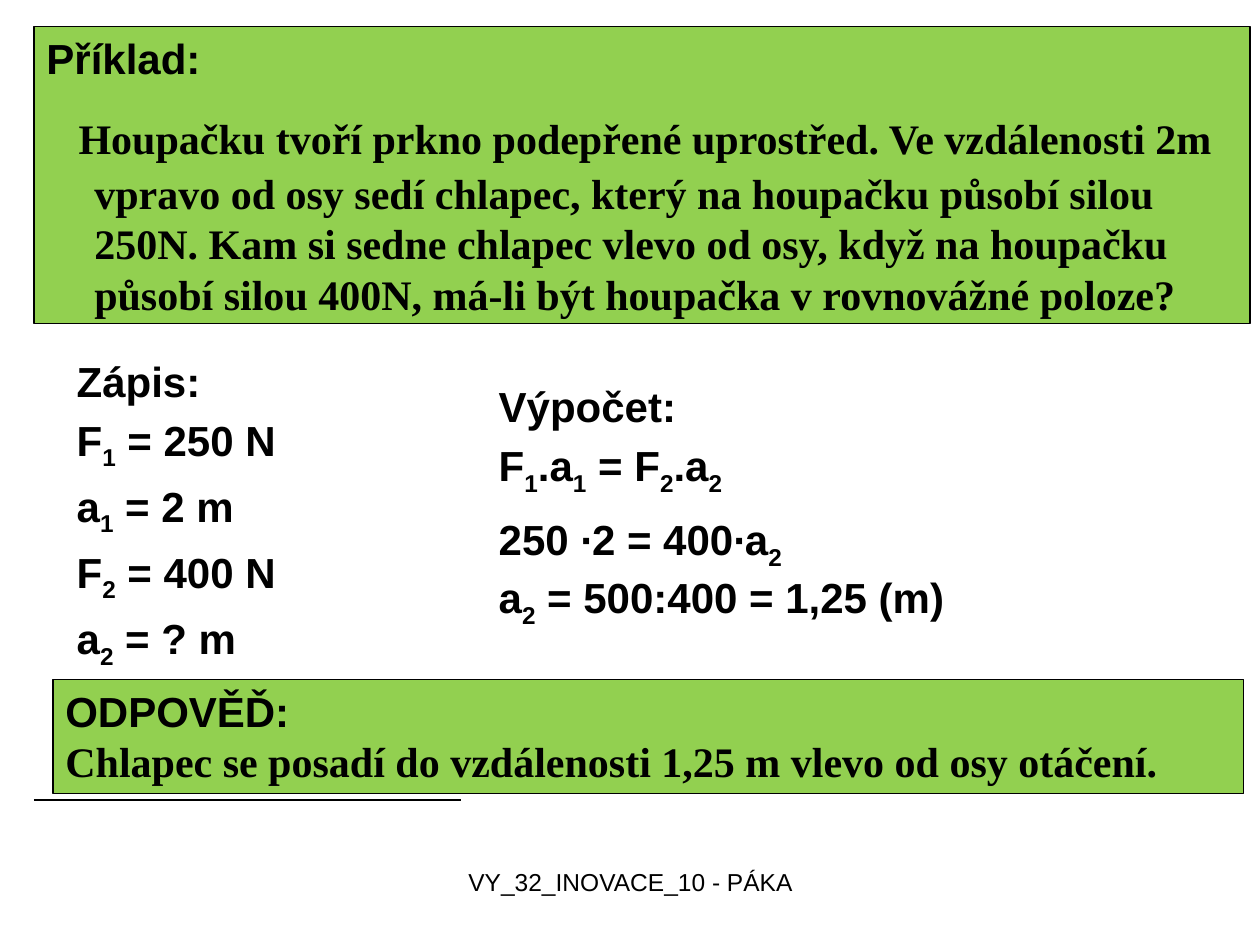
from pptx import Presentation, util as u
from pptx.dml.color import RGBColor
from pptx.enum import shapes, text
from lxml import etree

INK = {"black": "000000", "green": "92D050"}
SANS, SERIF = "Arial", "Times New Roman"

deck = Presentation()
deck.slide_width, deck.slide_height = u.Inches(10), u.Inches(7.5)
col, row = deck.slide_width / 100, deck.slide_height / 75
slide = deck.slides.add_slide(deck.slide_layouts[6])
black = RGBColor.from_string(INK["black"])


def grid(x, y, w, h):
    return int(x * col), int(y * row), int(w * col), int(h * row)


def write(frame, lines, size=24, bold=True, gap=0, pitch=None):
    frame.word_wrap = True
    frame.vertical_anchor = text.MSO_ANCHOR.TOP
    for n, (line, face) in enumerate(lines):
        para = frame.paragraphs[0] if n == 0 else frame.add_paragraph()
        para.alignment = text.PP_ALIGN.LEFT
        para.space_before = u.Pt(gap)
        if pitch:
            para.line_spacing = pitch
        font = para.font
        font.name, font.size, font.bold = face, u.Pt(size), bold
        font.color.rgb = black
        first, *rest = line.split("_") if bold else [line]
        if first:
            para.add_run().text = first
        for part in rest:
            sub = para.add_run()
            sub.text = part[0]
            sub.font._element.set("baseline", "-25000")
            if part[1:]:
                para.add_run().text = part[1:]


task = (
    "Houpačku tvoří prkno podepřené uprostřed. Ve vzdálenosti 2m vpravo od osy "
    "sedí chlapec, který na houpačku působí silou 250N. Kam si sedne chlapec "
    "vlevo od osy, když na houpačku působí silou 400N, má-li být houpačka "
    "v rovnovážné poloze?"
)
reply = "Chlapec se posadí do vzdálenosti 1,25 m vlevo od osy otáčení."
panels = [
    ((2.7, 2.1, 96.5, 23.6), [("Příklad:", SANS), ("", SERIF)], 5),
    ((4.2, 53.9, 94.5, 9.1), [("ODPOVĚĎ:", SANS), (reply, SERIF)], 0),
]
frames = []
for place, lines, gap in panels:
    panel = slide.shapes.add_shape(shapes.MSO_SHAPE.RECTANGLE, *grid(*place))
    panel.shadow.inherit = False
    panel.fill.solid()
    panel.fill.fore_color.rgb = RGBColor.from_string(INK["green"])
    panel.line.color.rgb = black
    panel.line.width = u.Pt(0.75)
    write(panel.text_frame, lines, gap=gap)
    frames.append(panel.text_frame)

story = frames[0].paragraphs[1]
lead = story.add_run()
lead.text = " "
lead.font.size = u.Pt(36)
story.add_run().text = task
props = story._p.get_or_add_pPr()
props.set("marL", str(u.Inches(0.38)))
props.set("indent", str(-u.Inches(0.25)))

notes = [
    ((5.1, 27.7, 29.2, 28.4), ["Zápis:", "F_1 = 250 N", "a_1 = 2 m", "F_2 = 400 N", "a_2 = ? m"], None),
    ((38.6, 29.7, 45.8, 11.7), ["Výpočet:", "F_1.a_1 = F_2.a_2"], None),
    ((38.6, 46.4, 60, 7.5), ["a_2 = 500:400 = 1,25 (m)"], 0.5),
    ((38.6, 41.8, 46.7, 8.3), ["250 ∙2 = 400∙a_2"], 0.5),
]
for place, lines, pitch in notes:
    box = slide.shapes.add_textbox(*grid(*place))
    write(box.text_frame, [(line, SANS) for line in lines], gap=5, pitch=pitch)

left, top, wide, _ = grid(2.7, 63.5, 33.9, 0)
rule = slide.shapes.add_connector(shapes.MSO_CONNECTOR.STRAIGHT, left, top, left + wide, top)
rule.line.color.rgb = black
rule.line.width = u.Pt(0.75)
etree.SubElement(rule._element.spPr, "{http://schemas.openxmlformats.org/drawingml/2006/main}effectLst")

foot = slide.shapes.add_textbox(*grid(34.2, 68.3, 31.7, 5.2)).text_frame
write(foot, [("VY_32_INOVACE_10 - PÁKA", SANS)], size=14, bold=False)
foot.paragraphs[0].alignment = text.PP_ALIGN.CENTER

deck.save("out.pptx")
